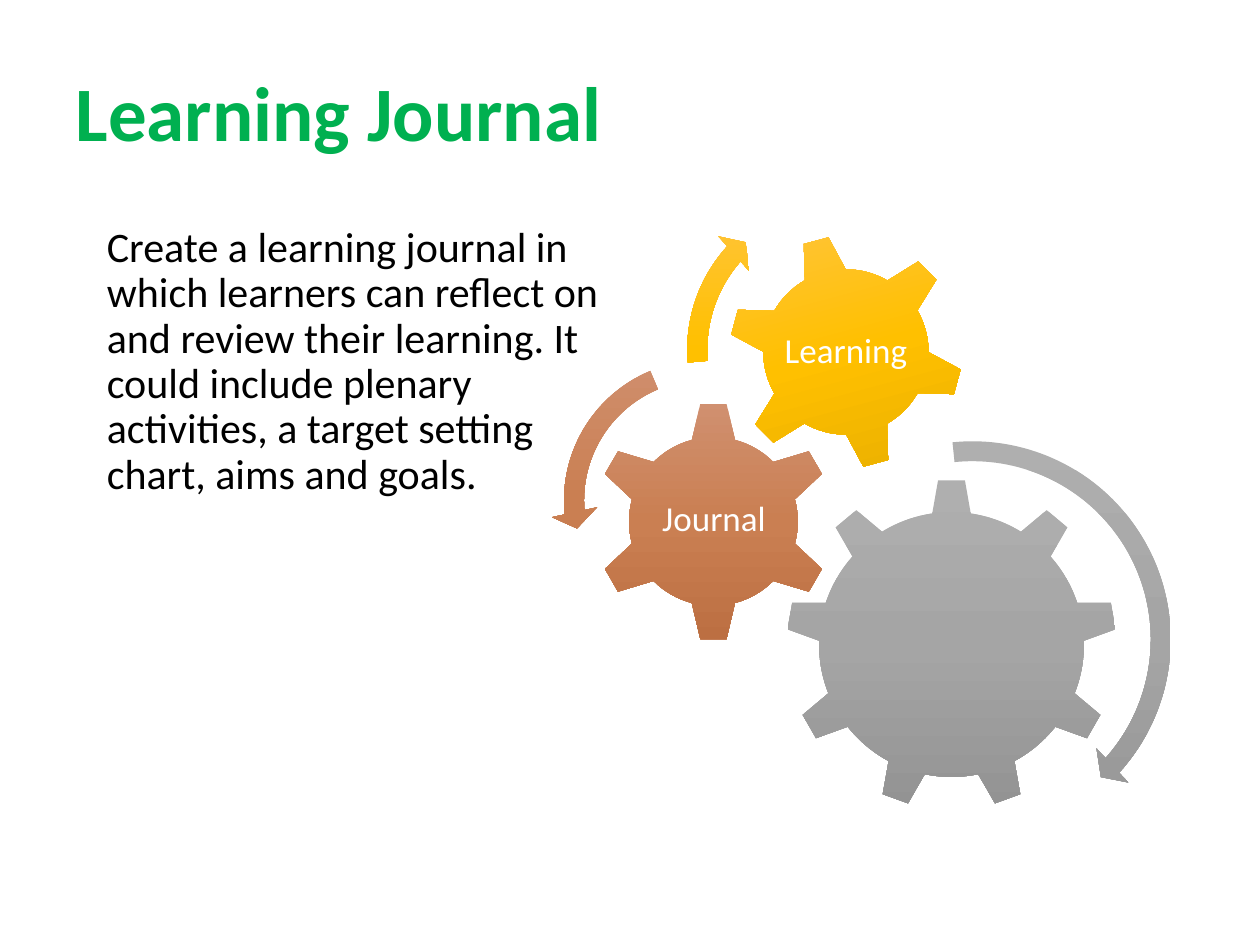
from dataclasses import dataclass

import lxml.etree
import pptx
import pptx.dml.color
import pptx.enum.shapes
import pptx.enum.text
import pptx.oxml.ns
import pptx.util

EMU_PER_PX = 914400 / 126
FONT = "Calibri"
SHAPE = pptx.enum.shapes.MSO_SHAPE
ANCHOR = pptx.enum.text.MSO_ANCHOR
ALIGN = pptx.enum.text.PP_ALIGN

# Top, middle and bottom colours of each gear and its arrow
GRAY = ("AFAFAF", "A5A5A5", "939393")
ORANGE = ("D09070", "CA7F52", "BC6F42")
YELLOW = ("FFC546", "FFC000", "E5AC00")


@dataclass
class Box:
    left: int
    top: int
    width: int
    height: int


@dataclass
class Part:
    kind: pptx.enum.shapes.MSO_SHAPE
    box: Box
    colors: tuple[str, str, str]
    rotation: int = 0
    adjustments: tuple[float, ...] = ()


@dataclass
class Label:
    text: str
    box: Box


PARTS = [
    Part(SHAPE.GEAR_9, Box(786, 479, 331, 331), GRAY),
    Part(SHAPE.GEAR_6, Box(593, 401, 241, 241), ORANGE),
    Part(SHAPE.GEAR_6, Box(728, 234, 236, 236), YELLOW, rotation=345),
    Part(SHAPE.CIRCULAR_ARROW, Box(761, 428, 423, 423), GRAY,
         adjustments=(0.047, 2.99, 25.2, 158.53, 0.055)),
    Part(SHAPE.LEFT_CIRCULAR_ARROW, Box(551, 347, 307, 307), ORANGE,
         adjustments=(0.065, 4.3, 104.89, 148.38, 0.075)),
    Part(SHAPE.CIRCULAR_ARROW, Box(674, 183, 333, 333), YELLOW,
         adjustments=(0.06, 3.94, 133.14, 105.08, 0.07)),
]

LABELS = [
    Label("Journal", Box(654, 461, 120, 118)),
    Label("Learning", Box(780, 286, 132, 132)),
]


def px(length: int) -> int:
    return round(length * EMU_PER_PX)


def rgb(value: str) -> pptx.dml.color.RGBColor:
    return pptx.dml.color.RGBColor.from_string(value)


def place(box: Box) -> tuple[int, int, int, int]:
    return px(box.left), px(box.top), px(box.width), px(box.height)


def write(shape, text: str, size: int, color: str, align=ALIGN.LEFT,
          anchor=ANCHOR.TOP, bold: bool = False):
    """Fill a text shape with one formatted paragraph and return it."""
    frame = shape.text_frame
    frame.word_wrap = True
    frame.auto_size = pptx.enum.text.MSO_AUTO_SIZE.NONE
    frame.vertical_anchor = anchor
    paragraph = frame.paragraphs[0]
    paragraph.alignment = align
    paragraph.line_spacing = 0.9
    run = paragraph.add_run()
    run.text = text
    run.font.name = FONT
    run.font.size = pptx.util.Pt(size)
    run.font.bold = bold
    run.font.color.rgb = rgb(color)
    return paragraph


def fill_gradient(shape, colors: tuple[str, str, str]) -> None:
    """Apply a vertical gradient with three evenly spaced stops."""
    qn = pptx.oxml.ns.qn
    shape.fill.gradient()
    shape.fill.gradient_angle = 270
    stops = shape._element.spPr.find(".//" + qn("a:gsLst"))
    for stop in list(stops):
        stops.remove(stop)
    for index, color in enumerate(colors):
        stop = lxml.etree.SubElement(stops, qn("a:gs"), pos=str(index * 50000))
        lxml.etree.SubElement(stop, qn("a:srgbClr"), val=color)


def add_part(slide, part: Part) -> None:
    shape = slide.shapes.add_shape(part.kind, *place(part.box))
    shape.rotation = part.rotation
    shape.shadow.inherit = False
    shape.line.fill.background()
    for index, value in enumerate(part.adjustments):
        shape.adjustments[index] = value
    fill_gradient(shape, part.colors)


def add_label(slide, label: Label) -> None:
    shape = slide.shapes.add_textbox(*place(label.box))
    write(shape, label.text, 20, "FFFFFF", ALIGN.CENTER, ANCHOR.MIDDLE)
    frame = shape.text_frame
    frame.margin_left = frame.margin_right = px(4)
    frame.margin_top = frame.margin_bottom = px(4)


def main() -> None:
    presentation = pptx.Presentation()
    presentation.slide_width = px(1260)
    presentation.slide_height = px(945)
    slide = presentation.slides.add_slide(presentation.slide_layouts[5])

    # Title
    title = slide.shapes.title
    title.left, title.top, title.width, title.height = place(Box(63, 38, 1134, 157))
    write(title, "Learning Journal", 44, "00B050", anchor=ANCHOR.MIDDLE, bold=True)

    # Description
    body = slide.shapes.add_textbox(*place(Box(63, 220, 557, 624)))
    paragraph = write(
        body,
        "Create a learning journal in which learners can reflect on and review "
        "their learning. It could include plenary activities, a target setting "
        "chart, aims and goals.",
        24, "000000")
    paragraph._p.get_or_add_pPr().set("marL", str(pptx.util.Inches(0.25)))

    # Gears and arrows, then their labels
    for part in PARTS:
        add_part(slide, part)
    for label in LABELS:
        add_label(slide, label)

    presentation.save("out.pptx")


if __name__ == "__main__":
    main()
